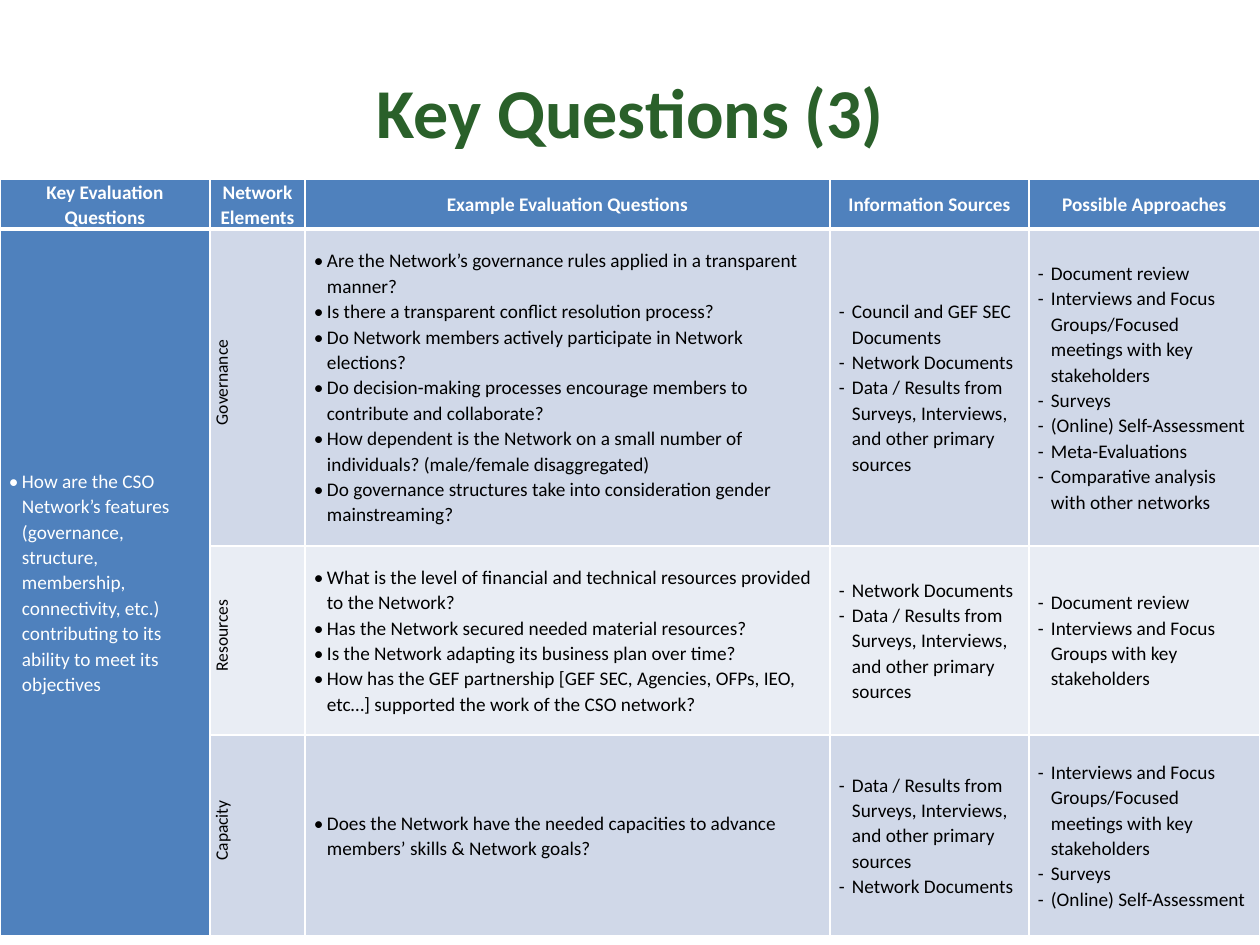
from lxml import etree
from pptx import Presentation, util as u
from pptx.dml.color import RGBColor
from pptx.enum import text
from pptx.oxml.ns import qn

PX = 914400 / 126  # EMU per px
BLUE, PALE, LIGHT, WHITE, BLACK = "4F81BD", "D0D8E8", "E9EDF4", "FFFFFF", "000000"


def px(length):
    return u.Emu(round(length * PX))


def add_text(paragraph, content, size, color, bold=False, bullet=None):
    if bullet:
        properties = paragraph._p.get_or_add_pPr()
        properties.set("marL", str(px(13)))
        properties.set("indent", str(-px(13)))
        etree.SubElement(properties, qn("a:buFont"), typeface="Calibri")
        etree.SubElement(properties, qn("a:buChar"), char=bullet)
    run = paragraph.add_run()
    run.text = content
    run.font.name = "Calibri"
    run.font.size = u.Pt(size)
    run.font.bold = bold
    run.font.color.rgb = RGBColor.from_string(color)


presentation = Presentation()
presentation.slide_width, presentation.slide_height = px(1260), px(945)
slide = presentation.slides.add_slide(presentation.slide_layouts[6])

# Title
title = slide.shapes.add_textbox(px(32), px(32), px(1197), px(157)).text_frame
title.word_wrap = True
title.vertical_anchor = text.MSO_ANCHOR.MIDDLE
title.paragraphs[0].alignment = text.PP_ALIGN.CENTER
add_text(title.paragraphs[0], "Key Questions (3)", 40, "2A602A", bold=True)

# Table content: one list of paragraphs per cell
headers = ["Key Evaluation Questions", "Network Elements", "Example Evaluation Questions",
           "Information Sources", "Possible Approaches"]
key_question = ("How are the CSO Network’s features (governance, structure, membership, "
                "connectivity, etc.) contributing to its ability to meet its objectives")
documents = "Network Documents"
data = "Data / Results from Surveys, Interviews, and other primary sources"
review = "Document review"
meetings = "Interviews and Focus Groups/Focused meetings with key stakeholders"
surveys = ["Surveys", "(Online) Self-Assessment"]
rows = [
    [[header] for header in headers],
    [[key_question], ["Governance"],
     ["Are the Network’s governance rules applied in a transparent manner?",
      "Is there a transparent conflict resolution process?",
      "Do Network members actively participate in Network elections?",
      "Do decision-making processes encourage members to contribute and collaborate?",
      "How dependent is the Network on a small number of individuals? (male/female disaggregated)",
      "Do governance structures take into consideration gender mainstreaming?"],
     ["Council and GEF SEC Documents", documents, data],
     [review, meetings, *surveys, "Meta-Evaluations",
      "Comparative analysis with other networks"]],
    [[], ["Resources"],
     ["What is the level of financial and technical resources provided to the Network?",
      "Has the Network secured needed material resources?",
      "Is the Network adapting its business plan over time?",
      "How has the GEF partnership [GEF SEC, Agencies, OFPs, IEO, etc…] supported the work "
      "of the CSO network?"],
     [documents, data],
     [review, "Interviews and Focus Groups with key stakeholders"]],
    [[], ["Capacity"],
     ["Does the Network have the needed capacities to advance members’ skills & Network goals?"],
     [data, documents],
     [meetings, *surveys]],
]
column_widths = [210, 95, 525, 199, 231]
row_heights = [50, 317, 189, 201]
row_fills = [BLUE, PALE, LIGHT, PALE]
bullets = ["•", None, "•", "-", "-"]

# Table
table = slide.shapes.add_table(len(rows), len(headers), 0, px(179),
                               px(sum(column_widths)), px(sum(row_heights))).table
table.first_row = table.horz_banding = False
for column, width in zip(table.columns, column_widths):
    column.width = px(width)
for row, height in zip(table.rows, row_heights):
    row.height = px(height)
table.cell(1, 0).merge(table.cell(3, 0))

for r, row in enumerate(rows):
    for c, lines in enumerate(row):
        cell = table.cell(r, c)
        is_header, is_element = r == 0, r > 0 and c == 1
        cell.margin_left = cell.margin_right = px(9)
        cell.margin_top = cell.margin_bottom = 0
        cell.vertical_anchor = text.MSO_ANCHOR.MIDDLE
        cell.fill.solid()
        cell.fill.fore_color.rgb = RGBColor.from_string(BLUE if c == 0 else row_fills[r])

        # White borders, heavier around the foot of the header
        cell_properties = cell._tc.get_or_add_tcPr()
        for position, side in enumerate(["lnL", "lnR", "lnT", "lnB"]):
            heavy = (r, side) in [(0, "lnB"), (1, "lnT")]
            line = etree.Element(qn(f"a:{side}"), w=str(u.Pt(3 if heavy else 1)))
            fill = etree.SubElement(line, qn("a:solidFill"))
            etree.SubElement(fill, qn("a:srgbClr"), val=WHITE)
            cell_properties.insert(position, line)

        if is_element:
            cell_properties.set("vert", "vert270")
        for i, content in enumerate(lines):
            frame = cell.text_frame
            paragraph = frame.add_paragraph() if i else frame.paragraphs[0]
            paragraph.line_spacing = 1.07
            if is_header or is_element:
                paragraph.alignment = text.PP_ALIGN.CENTER
            if is_element:
                paragraph._p.get_or_add_pPr().set("marL", str(px(10)))
            add_text(paragraph, content, 10 if is_element else 11,
                     WHITE if is_header or c == 0 else BLACK,
                     bold=is_header, bullet=None if is_header else bullets[c])

presentation.save("out.pptx")
